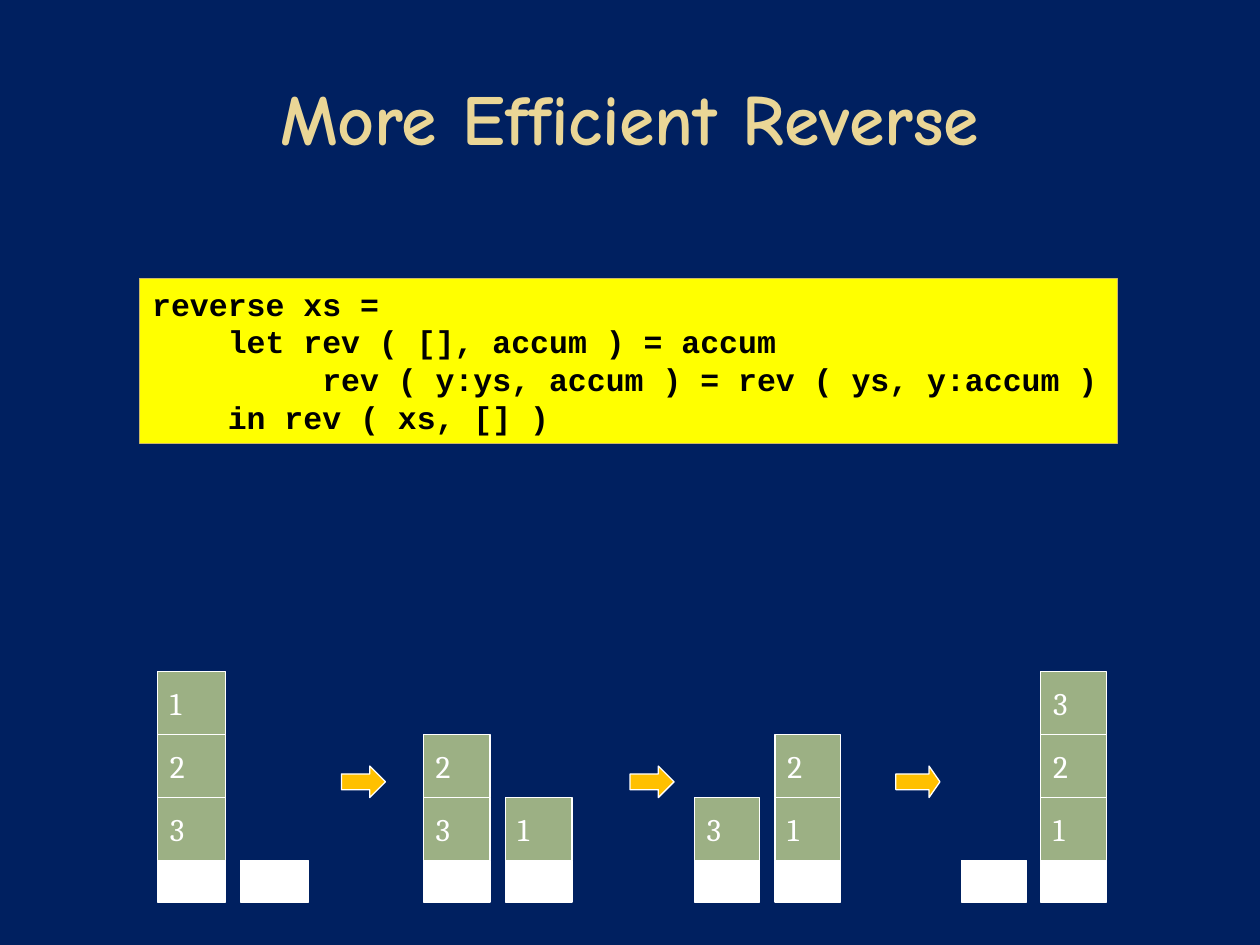
from pptx import Presentation
from pptx.dml.color import RGBColor
from pptx.enum import shapes, text
from pptx.util import Inches, Pt

NAVY = RGBColor(0x00, 0x20, 0x60)
SAND = RGBColor(0xEA, 0xD6, 0x96)
GREEN = RGBColor(0x9C, 0xB0, 0x84)
WHITE = RGBColor(0xFF, 0xFF, 0xFF)
AMBER = RGBColor(0xFF, 0xC0, 0x00)
YELLOW = RGBColor(0xFF, 0xFF, 0x00)
GOLD = RGBColor(0xCE, 0xB9, 0x66)
BLACK = RGBColor(0x00, 0x00, 0x00)

TITLE = "More Efficient Reverse"
CODE = [  # indent in characters, line
    (0, "reverse xs ="),
    (4, "let rev ( [], accum ) = accum"),
    (9, "rev ( y:ys, accum ) = rev ( ys, y:accum )"),
    (4, "in rev ( xs, [] )"),
]
STEPS = [  # stacks listed from top to bottom
    {"lefts": (1.25, 1.91), "width": 0.54, "stacks": ("123", "")},
    {"lefts": (3.36, 4.01), "width": 0.53, "stacks": ("23", "1")},
    {"lefts": (5.51, 6.15), "width": 0.52, "stacks": ("3", "21")},
    {"lefts": (7.63, 8.26), "width": 0.52, "stacks": ("", "321")},
]
ARROWS = [(2.71, 0.5), (5.0, 0.5), (7.11, 0.345)]  # left, head proportion

BASE_TOP, BASE_HEIGHT, CELL_HEIGHT = 6.83, 0.33, 0.5
CHAR_WIDTH = 0.15  # 18 pt monospace

TITLE_FONT = {"name": "Comic Neue", "size": Pt(41), "bold": True}
CODE_FONT = {"name": "Courier New", "size": Pt(18), "bold": True}
CELL_FONT = {"name": "Cambria", "size": Pt(18)}


def add_block(slide, box, fill, line=WHITE, preset=shapes.MSO_SHAPE.RECTANGLE):
    block = slide.shapes.add_shape(preset, *map(Inches, box))
    block.shadow.inherit = False
    block.fill.solid()
    block.fill.fore_color.rgb = fill
    block.line.color.rgb = line
    block.line.width = Pt(0.75)
    return block


def write(paragraph, words, font, color, align=text.PP_ALIGN.LEFT):
    paragraph.alignment = align
    run = paragraph.add_run()
    run.text = words
    for key, value in font.items():
        setattr(run.font, key, value)
    run.font.color.rgb = color


def add_title(slide):
    frame = slide.shapes.add_textbox(*map(Inches, (0.5, 0.3, 9, 1.25))).text_frame
    frame.word_wrap = True
    frame.vertical_anchor = text.MSO_ANCHOR.MIDDLE
    write(frame.paragraphs[0], TITLE, TITLE_FONT, SAND, text.PP_ALIGN.CENTER)


def add_code(slide):
    frame = add_block(slide, (1.11, 2.21, 7.76, 1.31), YELLOW, GOLD).text_frame
    frame.word_wrap = True
    frame.vertical_anchor = text.MSO_ANCHOR.TOP
    for number, (indent, line) in enumerate(CODE):
        paragraph = frame.add_paragraph() if number else frame.paragraphs[0]
        write(paragraph, line, CODE_FONT, BLACK)
        margin = Inches(indent * CHAR_WIDTH)
        paragraph._p.get_or_add_pPr().set("marL", str(int(margin)))


def add_stack(slide, left, width, values):
    """Draw numbered cells resting on a white base."""
    top = BASE_TOP - len(values) * CELL_HEIGHT
    for row, value in enumerate(values):
        box = (left, top + row * CELL_HEIGHT, width, CELL_HEIGHT)
        frame = add_block(slide, box, GREEN).text_frame
        frame.word_wrap = True
        frame.vertical_anchor = text.MSO_ANCHOR.MIDDLE
        write(frame.paragraphs[0], value, CELL_FONT, WHITE)
    add_block(slide, (left, BASE_TOP, width, BASE_HEIGHT), WHITE)


def main():
    deck = Presentation()
    deck.slide_width, deck.slide_height = Inches(10), Inches(7.5)
    slide = deck.slides.add_slide(deck.slide_layouts[6])
    slide.background.fill.solid()
    slide.background.fill.fore_color.rgb = NAVY

    add_title(slide)
    for step in STEPS:
        for left, values in zip(step["lefts"], step["stacks"]):
            add_stack(slide, left, step["width"], values)
    for left, head in ARROWS:
        arrow = add_block(slide, (left, 6.08, 0.35, 0.25), AMBER,
                          preset=shapes.MSO_SHAPE.RIGHT_ARROW)
        arrow.adjustments[1] = head
    add_code(slide)
    deck.save("out.pptx")


if __name__ == "__main__":
    main()
